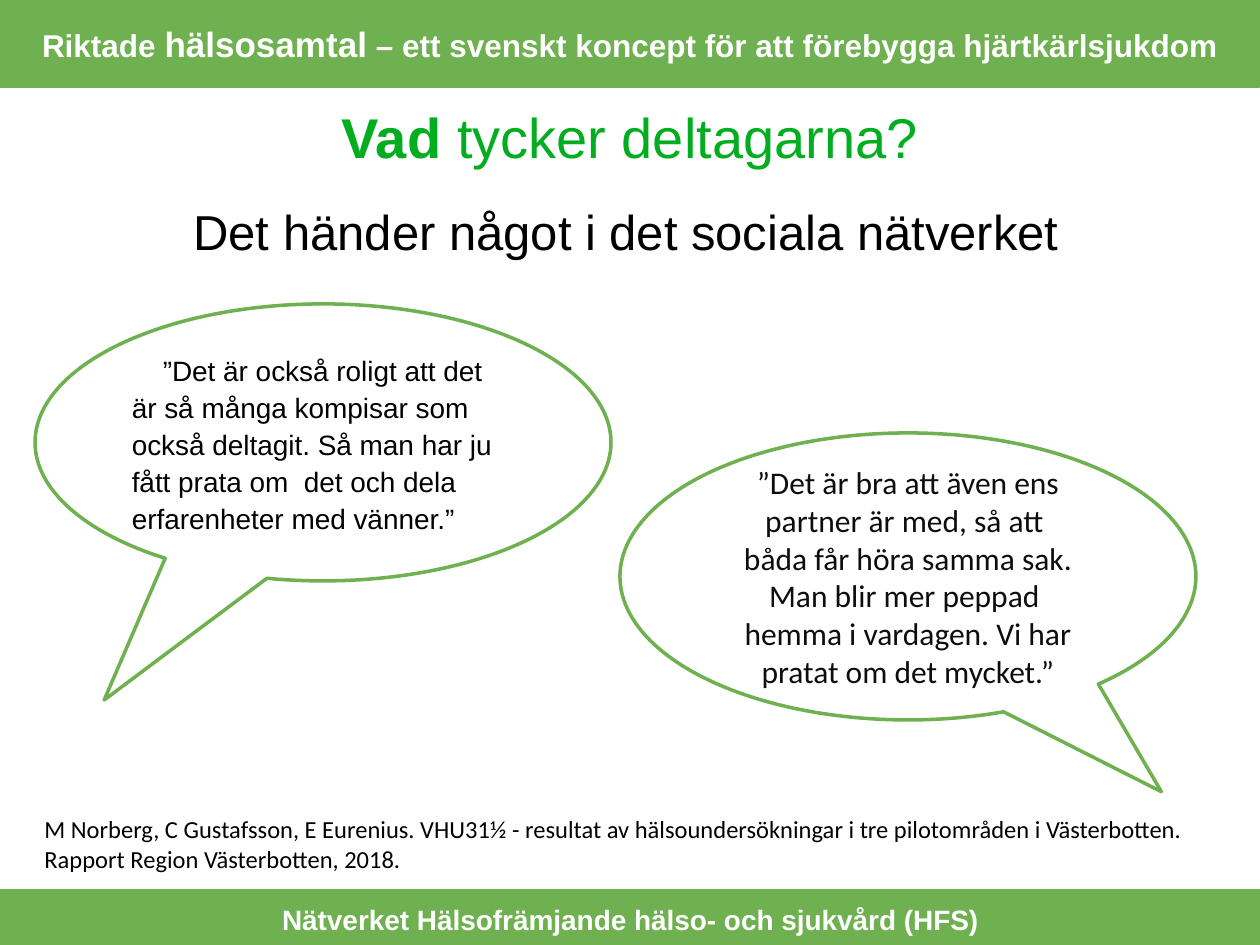
from pptx import Presentation
from pptx.dml.color import RGBColor
from pptx.enum.shapes import MSO_SHAPE
from pptx.enum.text import MSO_ANCHOR, MSO_AUTO_SIZE, PP_ALIGN
from pptx.util import Emu, Pt

PX_PER_INCH = 126
COLORS = {
    "band": "6FB050",
    "title": "02AE1F",
    "white": "FFFFFF",
    "black": "000000",
    "quote": "0D0D0D",
}


def px(length):
    return Emu(round(length * 914400 / PX_PER_INCH))


def rgb(name):
    return RGBColor.from_string(COLORS[name])


class SlideBuilder:
    def __init__(self, slide):
        self.slide = slide

    def fill_frame(self, frame, paragraphs, size, color="black", font="Arial",
                   align=PP_ALIGN.LEFT, anchor=MSO_ANCHOR.TOP, wrap=True, spacing=None):
        """Fill a frame; each paragraph is a list of (text, bold, size or None)."""
        frame.word_wrap = wrap
        frame.auto_size = MSO_AUTO_SIZE.NONE
        frame.vertical_anchor = anchor
        for index, runs in enumerate(paragraphs):
            paragraph = frame.paragraphs[0] if index == 0 else frame.add_paragraph()
            paragraph.alignment = align
            paragraph.line_spacing = spacing
            for text, bold, run_size in runs:
                run = paragraph.add_run()
                run.text = text
                run.font.name = font
                run.font.size = Pt(run_size or size)
                run.font.bold = bold
                run.font.color.rgb = rgb(color)

    def title(self, box, runs, size):
        title = self.slide.shapes.title
        title.left, title.top, title.width, title.height = map(px, box)
        self.fill_frame(title.text_frame, [runs], size, "title", align=PP_ALIGN.CENTER)

    def text(self, box, paragraphs, size, **style):
        label = self.slide.shapes.add_textbox(*map(px, box))
        self.fill_frame(label.text_frame, paragraphs, size, **style)

    def shape(self, kind, box, fill):
        shape = self.slide.shapes.add_shape(kind, *map(px, box))
        shape.shadow.inherit = False
        shape.fill.solid()
        shape.fill.fore_color.rgb = rgb(fill)
        shape.line.color.rgb = rgb("band")
        shape.line.width = Pt(2)
        return shape

    def band(self, box, text_box, runs, size):
        self.shape(MSO_SHAPE.RECTANGLE, box, "band")
        self.text(text_box, [runs], size, color="white", align=PP_ALIGN.CENTER)

    def bubble(self, box, tail, paragraphs, size, first_indent=0, **style):
        bubble = self.shape(MSO_SHAPE.OVAL_CALLOUT, box, "white")
        bubble.adjustments[0], bubble.adjustments[1] = tail
        frame = bubble.text_frame
        self.fill_frame(frame, paragraphs, size, anchor=MSO_ANCHOR.MIDDLE, **style)
        if first_indent:
            properties = frame.paragraphs[0]._p.get_or_add_pPr()
            properties.set("indent", str(px(first_indent)))


def main():
    presentation = Presentation()
    presentation.slide_width = px(1260)
    presentation.slide_height = px(945)
    title_only = presentation.slide_layouts[5]
    builder = SlideBuilder(presentation.slides.add_slide(title_only))

    builder.band((0, 891, 1260, 55), (134, 896, 993, 49),
                 [("Nätverket Hälsofrämjande hälso- och sjukvård (HFS)", True, None)], 16)
    builder.band((-1, 1, 1260, 85), (15, 16, 1230, 66), [
        ("Riktade ", True, None),
        ("hälsosamtal", True, 20),
        (" – ett svenskt koncept för att förebygga hjärtkärlsjukdom", True, None),
    ], 18)

    builder.title((64, 96, 1132, 81),
                  [("Vad ", True, None), ("tycker deltagarna?", False, None)], 32)
    builder.text((181, 195, 902, 72),
                 [[("Det händer något i det sociala nätverket", False, None)]], 28, wrap=False)

    builder.bubble((35, 304, 576, 277), (-0.38, 0.93), [[
        ("”Det är också roligt att det är så många kompisar som också deltagit. "
         "Så man har ju fått prata om  det och dela erfarenheter med vänner.”", False, None),
    ]], 16, first_indent=31, spacing=1.1)
    builder.bubble((620, 433, 576, 287), (0.44, 0.75), [
        [("”Det är bra att även ens partner är med, så att ", False, None)],
        [("båda får höra samma sak. Man blir mer peppad ", False, None)],
        [("hemma i vardagen. Vi har pratat om det mycket.”", False, None)],
    ], 18, color="quote", font="Calibri", align=PP_ALIGN.CENTER)

    builder.text((32, 808, 1181, 72), [
        [("M Norberg, C Gustafsson, E Eurenius. VHU31½ - resultat av "
          "hälsoundersökningar i tre pilotområden i Västerbotten.", False, None)],
        [("Rapport Region Västerbotten, 2018.", False, None)],
    ], 14, font="Calibri", wrap=False)

    presentation.save("out.pptx")


if __name__ == "__main__":
    main()
